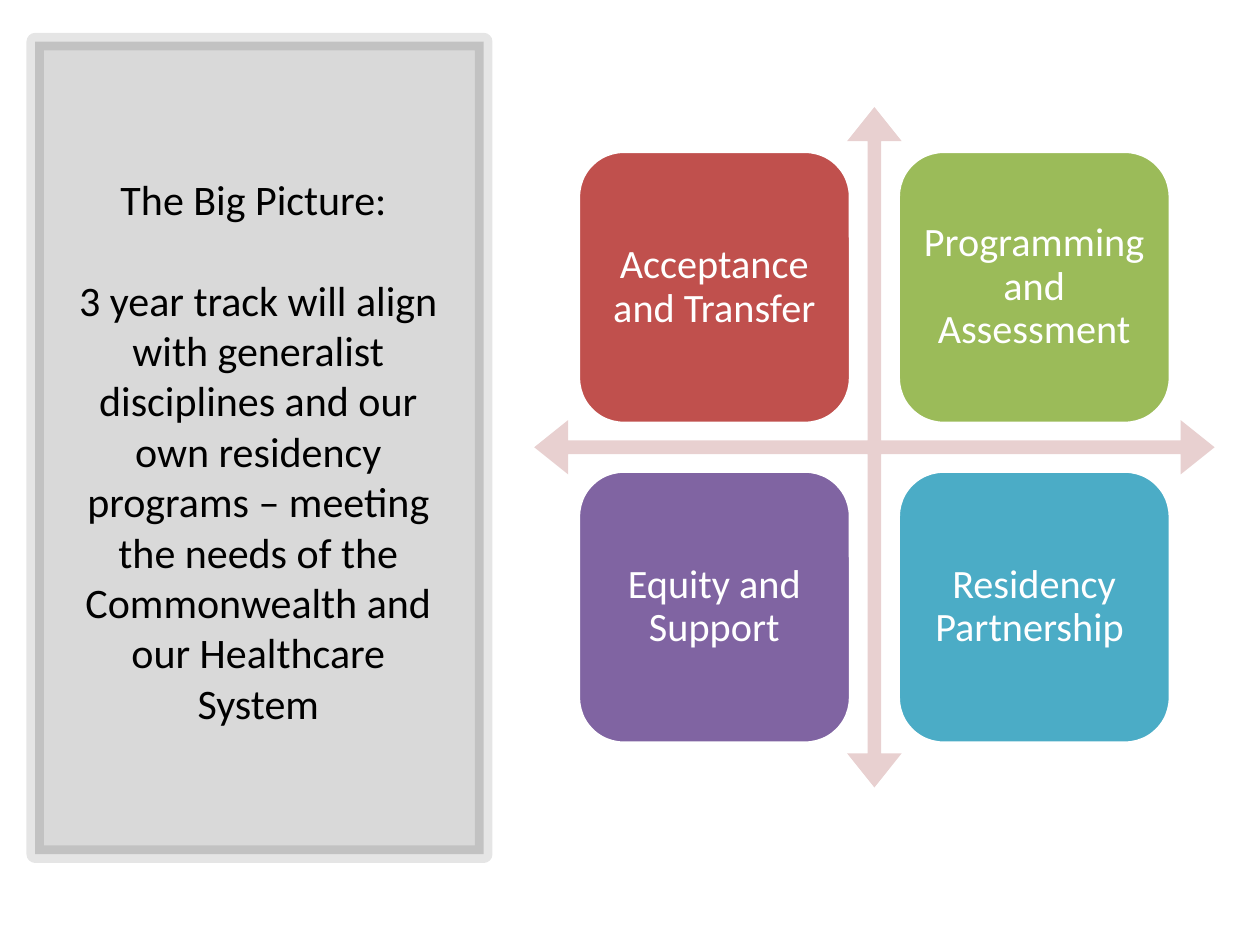
from lxml import etree
from pptx import Presentation, util as u
from pptx.dml.color import RGBColor
from pptx.enum import shapes as kinds, text as t
from pptx.oxml.ns import qn


def color(hex_string):
    return RGBColor.from_string(hex_string)


def write(frame, *paragraphs, size=24, ink="000000", spacing=1.0, inset=0.1):
    frame.word_wrap = True
    frame.auto_size = t.MSO_AUTO_SIZE.NONE
    frame.vertical_anchor = t.MSO_ANCHOR.MIDDLE
    frame.margin_left = frame.margin_right = u.Inches(inset)
    frame.margin_top = frame.margin_bottom = u.Inches(inset)
    for i, words in enumerate(paragraphs):
        para = frame.paragraphs[0] if i == 0 else frame.add_paragraph()
        para.alignment = t.PP_ALIGN.CENTER
        para.line_spacing = spacing
        para.space_before = u.Pt(0)
        para.space_after = u.Pt(0)
        run = para.add_run()
        run.text = words
        run.font.name = "Calibri"
        run.font.size = u.Pt(size)
        run.font.color.rgb = color(ink)


prs = Presentation()
prs.slide_width, prs.slide_height = u.Inches(10), u.Inches(7.5)
slide = prs.slides.add_slide(prs.slide_layouts[5])

# Translucent side panel
panel = slide.shapes.add_shape(
    kinds.MSO_SHAPE.RECTANGLE,
    u.Inches(0.28), u.Inches(0.33), u.Inches(3.56), u.Inches(6.45))
panel.shadow.inherit = False
panel.fill.solid()
panel.fill.fore_color.rgb = color("000000")
panel.line.color.rgb = color("000000")
panel.line.width = u.Pt(10)
outline = panel.line._get_or_add_ln()
etree.SubElement(outline, qn("a:round"))
for paint, opacity in ((panel._element.spPr.find(qn("a:solidFill")), 15),
                       (outline.find(qn("a:solidFill")), 10)):
    etree.SubElement(paint[0], qn("a:alpha"), val=str(opacity * 1000))

# Title on the panel, moved in front of it
title = slide.shapes.title
title.left, title.top = u.Inches(0.49), u.Inches(0.7)
title.width, title.height = u.Inches(3.12), u.Inches(5.75)
write(title.text_frame, "The Big Picture: ",
      "3 year track will align with generalist disciplines and our own residency "
      "programs – meeting the needs of the Commonwealth and our Healthcare System")
title.text_frame.paragraphs[0].space_after = u.Pt(28.8)
panel._element.addnext(title._element)

# Four-way arrow behind the themes
axis_left, axis_top, axis_size = 4.24, 0.85, 5.4
axes = slide.shapes.add_shape(
    kinds.MSO_SHAPE.QUAD_ARROW, u.Inches(axis_left), u.Inches(axis_top),
    u.Inches(axis_size), u.Inches(axis_size))
axes.shadow.inherit = False
for i, share in enumerate((0.02, 0.04, 0.05)):
    axes.adjustments[i] = share
axes.fill.solid()
axes.fill.fore_color.rgb = color("E8D0D0")
axes.line.fill.background()

# Themes in a two by two grid, centred on the arrow
themes = [("Acceptance and Transfer", "C0504D"),
          ("Programming and Assessment", "9BBB59"),
          ("Equity and Support", "8064A2"),
          ("Residency Partnership ", "4BACC6")]
tile_size = 0.4 * axis_size
pitch = 0.47 * axis_size
margin = (axis_size - pitch - tile_size) / 2
for i, (theme, tint) in enumerate(themes):
    row, col = divmod(i, 2)
    tile = slide.shapes.add_shape(
        kinds.MSO_SHAPE.ROUNDED_RECTANGLE,
        u.Inches(axis_left + margin + col * pitch),
        u.Inches(axis_top + margin + row * pitch),
        u.Inches(tile_size), u.Inches(tile_size))
    tile.shadow.inherit = False
    tile.fill.solid()
    tile.fill.fore_color.rgb = color(tint)
    tile.line.color.rgb = color("FFFFFF")
    tile.line.width = u.Pt(2)
    write(tile.text_frame, theme, size=23, ink="FFFFFF", spacing=0.9, inset=0.07)

prs.save("out.pptx")
